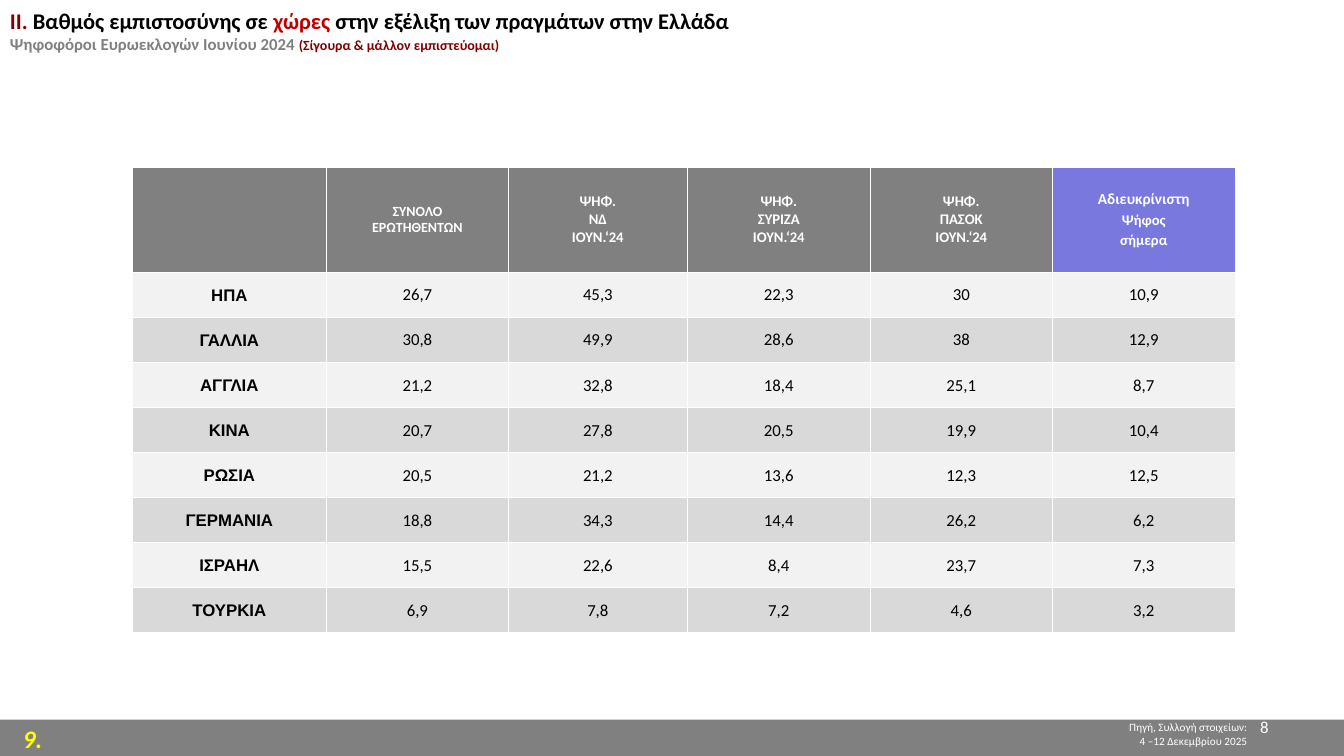
from lxml import etree
from pptx import Presentation
from pptx.dml.color import RGBColor
from pptx.enum.shapes import MSO_SHAPE
from pptx.enum.text import MSO_ANCHOR, PP_ALIGN
from pptx.oxml.ns import qn
from pptx.util import Inches, Pt

RECTANGLE = MSO_SHAPE.RECTANGLE
MIDDLE = MSO_ANCHOR.MIDDLE
LEFT, CENTER, RIGHT = PP_ALIGN.LEFT, PP_ALIGN.CENTER, PP_ALIGN.RIGHT

WHITE = RGBColor(0xFF, 0xFF, 0xFF)
BLACK = RGBColor(0x00, 0x00, 0x00)
GRAY = RGBColor(0x80, 0x80, 0x80)
MAROON = RGBColor(0x80, 0x00, 0x00)
RED = RGBColor(0xC0, 0x00, 0x00)
YELLOW = RGBColor(0xFF, 0xFF, 0x00)
VIOLET = RGBColor(0x78, 0x78, 0xDE)
BANDS = (RGBColor(0xF2, 0xF2, 0xF2), RGBColor(0xD9, 0xD9, 0xD9))

HEADERS = [
    [],
    ["ΣΥΝΟΛΟ", "ΕΡΩΤΗΘΕΝΤΩΝ"],
    ["ΨΗΦ.", "NΔ", "ΙΟΥΝ.‘24"],
    ["ΨΗΦ.", "ΣΥΡΙΖΑ", "ΙΟΥΝ.‘24"],
    ["ΨΗΦ.", "ΠΑΣΟΚ", "ΙΟΥΝ.‘24"],
    ["Αδιευκρίνιστη", "Ψήφος", "σήμερα"],
]
TRUST = [
    ["ΗΠΑ", "26,7", "45,3", "22,3", "30", "10,9"],
    ["ΓΑΛΛΙΑ", "30,8", "49,9", "28,6", "38", "12,9"],
    ["ΑΓΓΛΙΑ", "21,2", "32,8", "18,4", "25,1", "8,7"],
    ["ΚΙΝΑ", "20,7", "27,8", "20,5", "19,9", "10,4"],
    ["ΡΩΣΙΑ", "20,5", "21,2", "13,6", "12,3", "12,5"],
    ["ΓΕΡΜΑΝΙΑ", "18,8", "34,3", "14,4", "26,2", "6,2"],
    ["ΙΣΡΑΗΛ", "15,5", "22,6", "8,4", "23,7", "7,3"],
    ["ΤΟΥΡΚΙΑ", "6,9", "7,8", "7,2", "4,6", "3,2"],
]
COLUMN_WIDTHS = [1.93, 1.8, 1.78, 1.81, 1.81, 1.81]
HEADER_HEIGHT = 1.04
ROW_HEIGHT = (4.62 - HEADER_HEIGHT) / len(TRUST)


def write_lines(text_frame, lines, size, color, bold=False, align=CENTER, font_name="Calibri"):
    text_frame.word_wrap = True
    for index, line in enumerate(lines):
        paragraph = text_frame.paragraphs[0] if index == 0 else text_frame.add_paragraph()
        paragraph.text = line
        paragraph.alignment = align
        paragraph.font.name = font_name
        paragraph.font.size = Pt(size)
        paragraph.font.bold = bold
        paragraph.font.color.rgb = color


def style_cell(cell, fill, margins):
    cell.fill.solid()
    cell.fill.fore_color.rgb = fill
    cell.vertical_anchor = MIDDLE
    cell.margin_left, cell.margin_top, cell.margin_right, cell.margin_bottom = map(Inches, margins)
    properties = cell._tc.get_or_add_tcPr()
    for index, side in enumerate(("a:lnL", "a:lnR", "a:lnT", "a:lnB")):
        border = etree.Element(qn(side), w=str(Pt(0.5)))
        solid = etree.SubElement(border, qn("a:solidFill"))
        etree.SubElement(solid, qn("a:srgbClr"), val=str(WHITE))
        properties.insert(index, border)


presentation = Presentation()
presentation.slide_width = Inches(13.33)
presentation.slide_height = Inches(7.5)
slide = presentation.slides.add_slide(presentation.slide_layouts[6])
shapes = slide.shapes

footer_top = Inches(7.14)
footer_bar = shapes.add_shape(
    RECTANGLE, 0, footer_top, presentation.slide_width, presentation.slide_height - footer_top
)
footer_bar.shadow.inherit = False
footer_bar.fill.solid()
footer_bar.fill.fore_color.rgb = GRAY
footer_bar.line.fill.background()

FOOTER_TEXTS = [
    ((9.58, 7.1, 2.89, 0.37), ["Πηγή, Συλλογή στοιχείων:", "4 –12 Δεκεμβρίου 2025"], 8, WHITE, False, RIGHT),
    ((0.13, 7.13, 0.67, 0.4), ["9."], 18, YELLOW, True, LEFT),
    ((10.6, 7.06, 2.08, 0.5), ["8"], 12, WHITE, False, RIGHT),
]
for place, lines, size, color, bold, align in FOOTER_TEXTS:
    box = shapes.add_textbox(*map(Inches, place))
    write_lines(box.text_frame, lines, size, color, bold, align)
    if lines == ["9."]:
        box.text_frame.paragraphs[0].font.italic = True

title = shapes.add_textbox(0, Inches(0.02), Inches(9), Inches(0.73))
title.text_frame.word_wrap = True
title_paragraph = title.text_frame.paragraphs[0]
title_paragraph.font.name = "Calibri"
title_paragraph.font.bold = True
TITLE_LINES = [
    [
        ("IΙ. ", 16, MAROON),
        ("Βαθμός εμπιστοσύνης σε ", 16, BLACK),
        ("χώρες ", 16, RED),
        ("στην εξέλιξη των πραγμάτων στην Ελλάδα", 16, BLACK),
    ],
    [
        ("Ψηφοφόροι Ευρωεκλογών Ιουνίου 2024 ", 12, GRAY),
        ("(Σίγουρα & μάλλον εμπιστεύομαι)", 10, MAROON),
    ],
]
for index, line in enumerate(TITLE_LINES):
    if index:
        title_paragraph.add_line_break()
    for text, size, color in line:
        run = title_paragraph.add_run()
        run.text = text
        run.font.size = Pt(size)
        run.font.color.rgb = color

table = shapes.add_table(
    len(TRUST) + 1, len(HEADERS), Inches(1.31), Inches(1.66), Inches(sum(COLUMN_WIDTHS)), Inches(4.62)
).table
for column, width in zip(table.columns, COLUMN_WIDTHS):
    column.width = Inches(width)
for index, row in enumerate(table.rows):
    row.height = Inches(ROW_HEIGHT if index else HEADER_HEIGHT)

last_column = len(HEADERS) - 1
for column, lines in enumerate(HEADERS):
    cell = table.cell(0, column)
    style_cell(cell, VIOLET if column == last_column else GRAY, (0.1, 0.05, 0.1, 0.05))
    write_lines(cell.text_frame, lines, 10 if column == 1 else 10.5, WHITE, True)
undecided = table.cell(0, last_column).text_frame.paragraphs
undecided[0].font.size = Pt(11)
for paragraph in undecided[1:]:
    paragraph.space_before = Pt(2)

for row, values in enumerate(TRUST, start=1):
    for column, value in enumerate(values):
        cell = table.cell(row, column)
        style_cell(cell, BANDS[(row - 1) % 2], (0.01, 0.01, 0.01, 0))
        is_country = column == 0
        write_lines(
            cell.text_frame, [value], 12, BLACK, is_country, font_name="Arial" if is_country else "Calibri"
        )

presentation.save("out.pptx")
